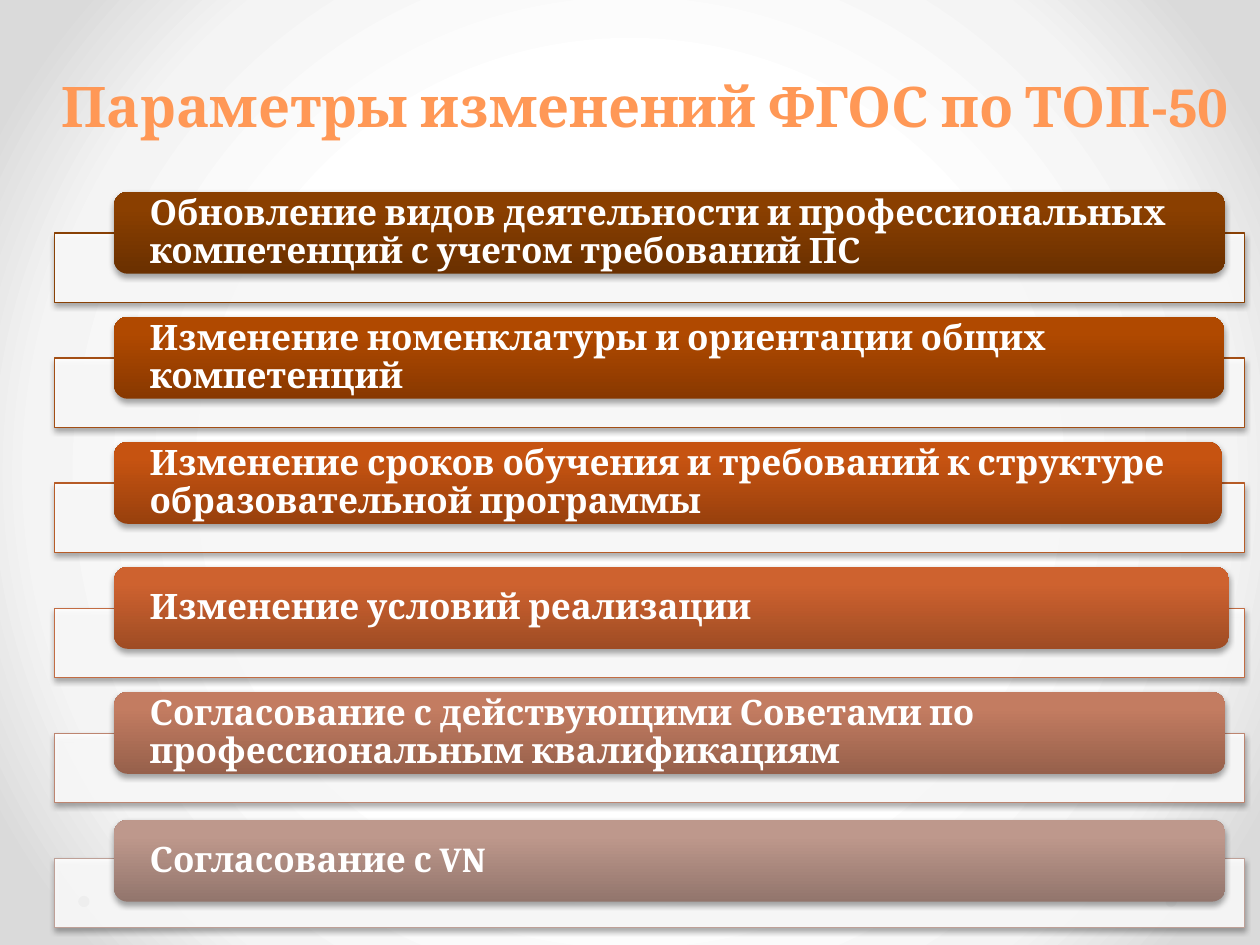
import pptx
import pptx.util
import pptx.oxml
import pptx.oxml.ns
import pptx.dml.color
import pptx.enum.shapes
import pptx.enum.text
from lxml import etree

HUES = {"title": "FF9856", "white": "FFFFFF", "dot": "808080", "shade": "000000",
        "mist": "F4F4F4", "edge": "DADADA"}
ROWS = [
    ("Обновление видов деятельности и профессиональных компетенций с учетом требований ПС",
     88.2, 0, "894105", "6A3000", "8A3F00"),
    ("Изменение номенклатуры и ориентации общих компетенций",
     88.1, 0, "A34E14", "883800", "B04900"),
    ("Изменение сроков обучения и требований к структуре образовательной программы",
     87.9, 0, "B75C27", "98400D", "C65311"),
    ("Изменение условий реализации",
     88.5, 0, "C26C43", "9F4C24", "CE622F"),
    ("Согласование с действующими Советами по профессиональным квалификациям",
     88.2, 0, "BD8570", "96604B", "C37C61"),
    ("Согласование с VN",
     88.2, 0.3, "BEA097", "92756C", "BE988C"),
]
RGB = pptx.dml.color.RGBColor.from_string
KIND = pptx.enum.shapes.MSO_SHAPE
ALIGN = pptx.enum.text.PP_ALIGN
ANCHOR = pptx.enum.text.MSO_ANCHOR
Pt = pptx.util.Pt
qn = pptx.oxml.ns.qn
NS = pptx.oxml.ns.nsdecls("a")

deck = pptx.Presentation()
deck.slide_width = pptx.util.Inches(10)
deck.slide_height = pptx.util.Inches(7.5)
col = deck.slide_width / 100
row = deck.slide_height / 100
slide = deck.slides.add_slide(deck.slide_layouts[5])


def write(shape, text, size, hue, align, anchor, space, after=0, inset=0.1, base=0):
    frame = shape.text_frame
    frame.word_wrap = True
    frame.auto_size = pptx.enum.text.MSO_AUTO_SIZE.NONE
    frame.vertical_anchor = anchor
    frame.margin_left = frame.margin_right = pptx.util.Inches(inset)
    frame.margin_top = 0
    frame.margin_bottom = pptx.util.Inches(base)
    para = frame.paragraphs[0]
    para.alignment = align
    para.line_spacing = space
    para.space_after = Pt(after)
    run = para.add_run()
    run.text = text
    run.font.name = "Cambria"
    run.font.size = Pt(size)
    run.font.bold = True
    run.font.color.rgb = RGB(hue)


def block(kind, left, top, wide, high, hue, cast=True):
    shape = slide.shapes.add_shape(
        kind, int(left * col), int(top * row), int(wide * col), int(high * row))
    shape.fill.solid()
    shape.fill.fore_color.rgb = RGB(hue)
    shape.line.fill.background()
    shape.shadow.inherit = False
    if cast:
        shape.element.spPr.find(qn("a:effectLst")).append(pptx.oxml.parse_xml(
            f'<a:outerShdw {NS} blurRad="{Pt(3.1)}" dist="{Pt(1.8)}" dir="5400000" rotWithShape="0">'
            f'<a:srgbClr val="{HUES["shade"]}"><a:alpha val="35000"/></a:srgbClr></a:outerShdw>'))
    return shape


slide.background.fill.gradient()
old = slide.element.find(".//" + qn("a:gradFill"))
stops = "".join(
    f'<a:gs pos="{spot}000"><a:srgbClr val="{HUES[name]}"/></a:gs>'
    for spot, name in [(50, "white"), (76, "mist"), (92, "edge")])
old.getparent().replace(old, pptx.oxml.parse_xml(
    f'<a:gradFill {NS} rotWithShape="1"><a:gsLst>{stops}</a:gsLst><a:path path="circle">'
    '<a:fillToRect l="50000" t="50000" r="50000" b="50000"/></a:path></a:gradFill>'))

for left in (92.5, 6.2):
    block(KIND.OVAL, left, 94.8, 0.9, 1.2, HUES["dot"], cast=False)

title = slide.shapes.title
title.left, title.top = int(3.5 * col), int(2 * row)
title.width, title.height = int(95.3 * col), int(13.33 * row)
write(title, "Параметры изменений ФГОС по ТОП-50", size=32, hue=HUES["title"],
      align=ALIGN.CENTER, anchor=ANCHOR.BOTTOM, space=Pt(58), base=0.05)

for i, (text, wide, drop, edge, dark, light) in enumerate(ROWS):
    top = 20.3 + 13.23 * i
    panel = block(KIND.RECTANGLE, 4.3, top + 4.37, 94.5, 7.33, HUES["white"])
    tint = panel.element.spPr.find(qn("a:solidFill"))[0]
    etree.SubElement(tint, qn("a:alpha")).set("val", "90000")
    panel.line.color.rgb = RGB(edge)
    panel.line.width = Pt(0.75)

    bar = block(KIND.ROUNDED_RECTANGLE, 9.05, top + drop, wide, 8.67, light)
    bar.fill.gradient()
    bar.fill.gradient_angle = 90
    for stop, hue, spot in zip(bar.fill.gradient_stops, (dark, light), (0, 0.8)):
        stop.color.rgb = RGB(hue)
        stop.position = spot
    write(bar, text, size=20, hue=HUES["white"], align=ALIGN.LEFT,
          anchor=ANCHOR.MIDDLE, space=0.9, after=7, inset=0.25)

deck.save("out.pptx")
